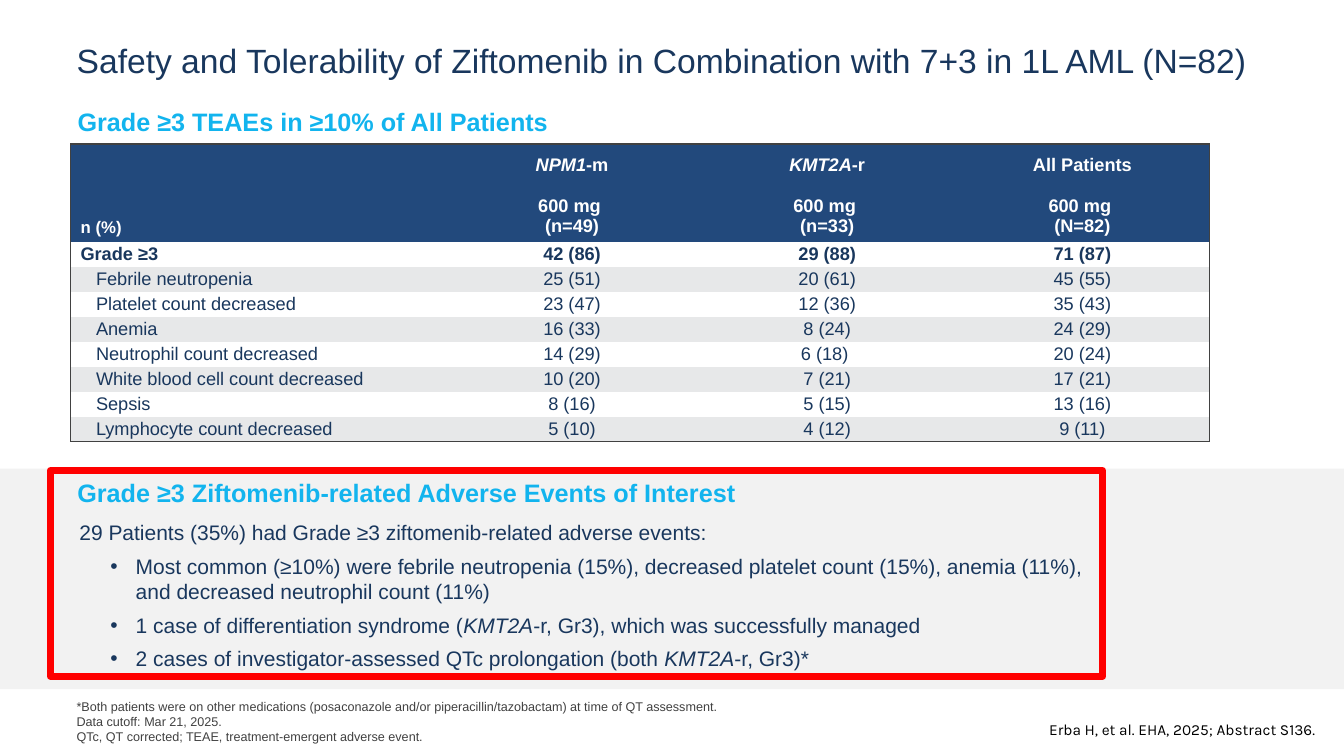
import lxml.etree
import pptx
import pptx.dml.color
import pptx.enum.shapes
import pptx.enum.text
import pptx.oxml.ns
import pptx.util
from pptx.util import Cm

COLORS = {
    "navy": "19375D", "header": "22497C", "cyan": "12B4EE", "white": "FFFFFF",
    "stripe": "E7E8E9", "band": "F2F2F2", "gray": "414141", "red": "FF0000",
    "black": "000000",
}
ALIGN = pptx.enum.text.PP_ALIGN
ANCHOR = pptx.enum.text.MSO_ANCHOR
NO_TABLE_STYLE = "{2D5ABB26-0587-4C30-8999-92F81FD0307C}"

COLUMNS = [("_NPM1_-m", "(n=49)"), ("_KMT2A_-r", "(n=33)"), ("All Patients", "(N=82)")]
EVENTS = [
    ("Grade ≥3", "42 (86)", "29 (88)", "71 (87)"),
    ("Febrile neutropenia", "25 (51)", "20 (61)", "45 (55)"),
    ("Platelet count decreased", "23 (47)", "12 (36)", "35 (43)"),
    ("Anemia", "16 (33)", "8 (24)", "24 (29)"),
    ("Neutrophil count decreased", "14 (29)", "6 (18) ", "20 (24)"),
    ("White blood cell count decreased", "10 (20)", "7 (21)", "17 (21)"),
    ("Sepsis", "8 (16)", "5 (15)", "13 (16)"),
    ("Lymphocyte count decreased", "5 (10)", "4 (12)", "9 (11)"),
]
FINDINGS = [
    "Most common (≥10%) were febrile neutropenia (15%), decreased platelet count (15%), "
    "anemia (11%),\nand decreased neutrophil count (11%)",
    "1 case of differentiation syndrome (_KMT2A_-r, Gr3), which was successfully managed",
    "2 cases of investigator-assessed QTc prolongation (both _KMT2A_-r, Gr3)*",
]
FOOTNOTES = [
    "*Both patients were on other medications (posaconazole and/or piperacillin/tazobactam) "
    "at time of QT assessment.",
    "Data cutoff: Mar 21, 2025.",
    "QTc, QT corrected; TEAE, treatment-emergent adverse event.",
]


def rgb(name):
    return pptx.dml.color.RGBColor.from_string(COLORS[name])


def add_element(parent, tag, **attributes):
    return lxml.etree.SubElement(parent, pptx.oxml.ns.qn(tag), attributes)


class SafetySlide:
    def __init__(self, presentation, layout_index, font="Arial"):
        self.slide = presentation.slides.add_slide(presentation.slide_layouts[layout_index])
        self.font = font

    def set_text(self, frame, lines, size, color, bold=False, align=ALIGN.LEFT, font=None):
        """Fill a frame with one paragraph per line; text between underscores is italic."""
        for number, line in enumerate(lines):
            paragraph = frame.add_paragraph() if number else frame.paragraphs[0]
            parts = line.split("_")
            paragraph.text = parts[0]
            for position, part in enumerate(parts[1:], 1):
                run = paragraph.add_run()
                run.text = part
                run.font.italic = position % 2 == 1
            paragraph.alignment = align
            paragraph.space_before = pptx.util.Pt(0)
            for run in paragraph.runs:
                run.font.name = font or self.font
                run.font.size = pptx.util.Pt(size)
                run.font.bold = bold
                run.font.color.rgb = rgb(color)

    def indent(self, paragraph, left, first=0, bullet=None):
        properties = paragraph._p.get_or_add_pPr()
        properties.set("marL", str(Cm(left)))
        properties.set("indent", str(Cm(first)))
        if bullet:
            add_element(properties, "a:buFont", typeface=self.font)
            add_element(properties, "a:buChar", char=bullet)
        else:
            add_element(properties, "a:buNone")

    def place(self, shape, left, top, width, height, anchor=ANCHOR.TOP):
        shape.left, shape.top = Cm(left), Cm(top)
        shape.width, shape.height = Cm(width), Cm(height)
        frame = shape.text_frame
        frame.word_wrap = True
        frame.auto_size = pptx.enum.text.MSO_AUTO_SIZE.NONE
        frame.vertical_anchor = anchor
        return frame

    def placeholder(self, number, *box, anchor=ANCHOR.TOP):
        return self.place(self.slide.placeholders[number], *box, anchor=anchor)

    def textbox(self, *box, anchor=ANCHOR.TOP):
        shape = self.slide.shapes.add_textbox(*map(Cm, box))
        return self.place(shape, *box, anchor=anchor)

    def rectangle(self, *box, fill=None, line=None, line_width=5):
        kind = pptx.enum.shapes.MSO_SHAPE.RECTANGLE
        shape = self.slide.shapes.add_shape(kind, *map(Cm, box))
        shape.shadow.inherit = False
        if fill:
            shape.fill.solid()
            shape.fill.fore_color.rgb = rgb(fill)
        else:
            shape.fill.background()
        if line:
            shape.line.color.rgb = rgb(line)
            shape.line.width = pptx.util.Pt(line_width)
        else:
            shape.line.fill.background()
        return shape

    def table(self, left, top, column_widths, row_heights):
        box = left, top, sum(column_widths), sum(row_heights)
        frame = self.slide.shapes.add_table(
            len(row_heights), len(column_widths), *map(Cm, box))
        table = frame.table
        table.first_row = table.horz_banding = False
        table._tbl.tblPr.find(pptx.oxml.ns.qn("a:tableStyleId")).text = NO_TABLE_STYLE
        for column, width in zip(table.columns, column_widths):
            column.width = Cm(width)
        for row, height in zip(table.rows, row_heights):
            row.height = Cm(height)
        return table

    def paint_cell(self, cell, fill, sides):
        """Draw borders on the given sides (in L, R, T, B order), then fill the cell."""
        properties = cell._tc.get_or_add_tcPr()
        for side in sides:
            line = add_element(properties, f"a:ln{side}", w=str(pptx.util.Pt(1)))
            add_element(add_element(line, "a:solidFill"), "a:srgbClr", val=COLORS["gray"])
        cell.fill.solid()
        cell.fill.fore_color.rgb = rgb(fill)

    def event_table(self):
        table = self.table(1.78, 3.63, [9.42] + [6.43] * 3, [0.91, 1.55] + [0.63] * len(EVENTS))
        last_row, last_column = len(table.rows) - 1, len(table.columns) - 1
        for row_number, row in enumerate(table.rows):
            header = row_number < 2
            fill = "header" if header else "stripe" if row_number % 2 else "white"
            for column_number, cell in enumerate(row.cells):
                edges = {"L": column_number == 0, "R": column_number == last_column,
                         "T": row_number == 0, "B": row_number == last_row}
                self.paint_cell(cell, fill, [side for side, outer in edges.items() if outer])
                cell.vertical_anchor = ANCHOR.BOTTOM if header else ANCHOR.MIDDLE
                if not header:
                    cell.margin_left = cell.margin_right = Cm(0)
                    cell.margin_top = cell.margin_bottom = Cm(0)

        table.cell(0, 0).merge(table.cell(1, 0))
        self.set_text(table.cell(0, 0).text_frame, ["n (%)"], 12, "white", bold=True)
        for column, (group, count) in enumerate(COLUMNS, 1):
            for row, lines in enumerate([[group], ["600 mg ", count]]):
                self.set_text(table.cell(row, column).text_frame, lines, 13, "white",
                              bold=True, align=ALIGN.CENTER)
        for row, event in enumerate(EVENTS, 2):
            total = row == 2
            for column, text in enumerate(event):
                self.set_text(table.cell(row, column).text_frame, [text], 13, "navy", bold=total,
                              align=ALIGN.CENTER if column else ALIGN.LEFT)
            name = table.cell(row, 0).text_frame.paragraphs[0]
            self.indent(name, 0.25 if total else 0.64)


def main():
    presentation = pptx.Presentation()
    presentation.slide_width, presentation.slide_height = Cm(33.87), Cm(19.05)
    page = SafetySlide(presentation, layout_index=3)

    band = page.rectangle(0, 11.81, 33.87, 5.56, fill="band")
    band.element.getparent().insert(2, band.element)

    title = page.placeholder(0, 1.68, 0.18, 30.5, 2.67, anchor=ANCHOR.MIDDLE)
    page.set_text(title, ["Safety and Tolerability of Ziftomenib in Combination with 7+3 "
                          "in 1L AML (N=82)"], 24, "navy")

    table_heading = page.placeholder(1, 1.7, 2.69, 28.55, 0.91)
    page.set_text(table_heading, ["Grade ≥3 TEAEs in ≥10% of All Patients"], 18, "cyan", bold=True)
    page.indent(table_heading.paragraphs[0], 0)
    table_heading.paragraphs[0].line_spacing = 0.8
    page.event_table()

    events_heading = page.textbox(1.7, 11.86, 26.09, 1.12, anchor=ANCHOR.MIDDLE)
    page.set_text(events_heading, ["Grade ≥3 Ziftomenib-related Adverse Events of Interest"],
                  18, "cyan", bold=True)

    findings = page.placeholder(2, 1.7, 12.95, 30.89, 4.39)
    findings.margin_left = findings.margin_right = Cm(0.15)
    findings.margin_top = findings.margin_bottom = Cm(0.15)
    page.set_text(findings, ["29 Patients (35%) had Grade ≥3 ziftomenib-related adverse events:",
                             *FINDINGS], 15, "navy")
    page.indent(findings.paragraphs[0], 0.15)
    for paragraph in findings.paragraphs[1:]:
        paragraph.level = 1
        page.indent(paragraph, 1.57, -0.64, bullet="•")
    for paragraph in findings.paragraphs:
        paragraph.space_after = pptx.util.Pt(6)

    page.set_text(page.textbox(1.68, 17.48, 18.54, 1.42), FOOTNOTES, 9, "gray")
    page.set_text(page.textbox(26.19, 18.01, 7.67, 0.74),
                  ["Erba H, et al. EHA, 2025; Abstract S136."], 11, "black", font="Karla")
    page.rectangle(1.27, 11.86, 26.52, 5.18, line="red")
    presentation.save("out.pptx")


if __name__ == "__main__":
    main()
